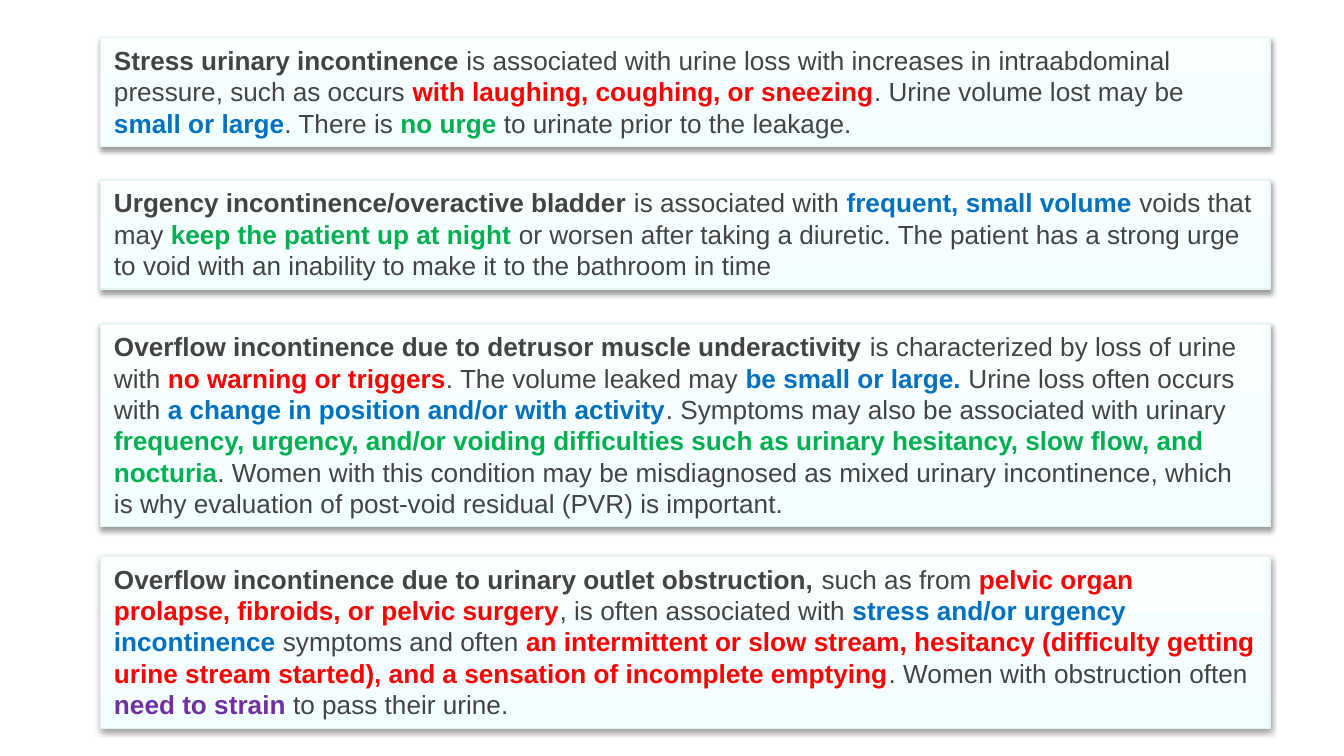
from lxml import etree
from pptx import Presentation
from pptx import util as u
from pptx.dml.color import RGBColor
from pptx.enum import shapes, text
from pptx.oxml.ns import qn

PX = 4572  # EMU per px, 200 px to the inch
COLORS = {
    "body": "434343", "red": "FF0000", "blue": "0070C0", "green": "00B050",
    "purple": "7030A0", "border": "E5F4F4", "shadow": "000000",
}
PANEL_GRADIENT = [(0, "F2FFFF"), (35, "F6FFFF"), (100, "FBFFFF")]
PANEL_LEFT, PANEL_WIDTH = 150, 1740

# Each panel: top, height, then (wording, emphasis); None is plain text
PANELS = [
    (56, 162, [
        ("Stress urinary incontinence ", "body"),
        ("is associated with urine loss with increases in intraabdominal "
         "pressure, such as occurs ", None),
        ("with laughing, coughing, or sneezing", "red"),
        (". Urine volume lost may be ", None),
        ("small or large", "blue"),
        (". There is ", None),
        ("no urge ", "green"),
        ("to urinate prior to the leakage.", None),
    ]),
    (268, 162, [
        ("Urgency incontinence/overactive bladder ", "body"),
        ("is associated with ", None),
        ("frequent, small volume ", "blue"),
        ("voids that may ", None),
        ("keep the patient up at night ", "green"),
        ("or worsen after taking a diuretic. The patient has a strong urge "
         "to void with an inability to make it to the bathroom in time", None),
    ]),
    (482, 302, [
        ("Overflow incontinence due to detrusor muscle underactivity", "body"),
        (" is characterized by loss of urine with ", None),
        ("no warning or triggers", "red"),
        (". The volume leaked may ", None),
        ("be small or large. ", "blue"),
        ("Urine loss often occurs with ", None),
        ("a change in position and/or with activity", "blue"),
        (". Symptoms may also be associated with urinary ", None),
        ("frequency, urgency, and/or voiding difficulties such as urinary "
         "hesitancy, slow flow, and nocturia", "green"),
        (". Women with this condition may be misdiagnosed as mixed urinary "
         "incontinence, which is why evaluation of post-void residual (PVR) "
         "is important.", None),
    ]),
    (828, 256, [
        ("Overflow incontinence due to urinary outlet obstruction, ", "body"),
        ("such as from ", None),
        ("pelvic organ prolapse, fibroids, or pelvic surgery", "red"),
        (", is often associated with ", None),
        ("stress and/or urgency incontinence ", "blue"),
        ("symptoms and often ", None),
        ("an intermittent or slow stream, hesitancy (difficulty getting urine "
         "stream started), and a sensation of incomplete emptying", "red"),
        (". Women with obstruction often ", None),
        ("need to strain ", "purple"),
        ("to pass their urine.", None),
    ]),
]


def rgb(name):
    return RGBColor.from_string(COLORS[name])


def add_xml(parent, tag, **attributes):
    return etree.SubElement(parent, qn(tag), attributes)


def style_panel(panel):
    # Gradient running from bottom to top
    panel.fill.gradient()
    panel.fill.gradient_angle = 90
    stops = panel.element.spPr.find(".//" + qn("a:gsLst"))
    for stop in list(stops):
        stops.remove(stop)
    for percent, color in PANEL_GRADIENT:
        stop = add_xml(stops, "a:gs", pos=str(percent * 1000))
        add_xml(stop, "a:srgbClr", val=color)

    # Border
    panel.line.color.rgb = rgb("border")
    panel.line.width = u.Pt(0.75)

    # Soft shadow below
    panel.shadow.inherit = False
    effects = panel.element.spPr.find(qn("a:effectLst"))
    shadow = add_xml(effects, "a:outerShdw", blurRad=str(u.Pt(3.1)),
                     dist=str(u.Pt(1.6)), dir="5400000", rotWithShape="0")
    shade = add_xml(shadow, "a:srgbClr", val=COLORS["shadow"])
    add_xml(shade, "a:alpha", val="38000")


def add_panel(slide, left, top, width, height, passages):
    panel = slide.shapes.add_shape(
        shapes.MSO_SHAPE.RECTANGLE, left * PX, top * PX, width * PX, height * PX)
    style_panel(panel)

    # Definition with coloured key phrases
    frame = panel.text_frame
    frame.word_wrap = True
    frame.auto_size = text.MSO_AUTO_SIZE.SHAPE_TO_FIT_TEXT
    frame.vertical_anchor = text.MSO_ANCHOR.TOP
    definition = frame.paragraphs[0]
    definition.alignment = text.PP_ALIGN.LEFT
    definition.font.name = "Arial"
    definition.font.size = u.Pt(14)
    for wording, emphasis in passages:
        run = definition.add_run()
        run.text = wording
        run.font.bold = emphasis is not None
        run.font.color.rgb = rgb(emphasis or "body")


def main():
    deck = Presentation()
    deck.slide_width, deck.slide_height = 2000 * PX, 1125 * PX
    slide = deck.slides.add_slide(deck.slide_layouts[6])
    for top, height, passages in PANELS:
        add_panel(slide, PANEL_LEFT, top, PANEL_WIDTH, height, passages)
    deck.save("out.pptx")


if __name__ == "__main__":
    main()
